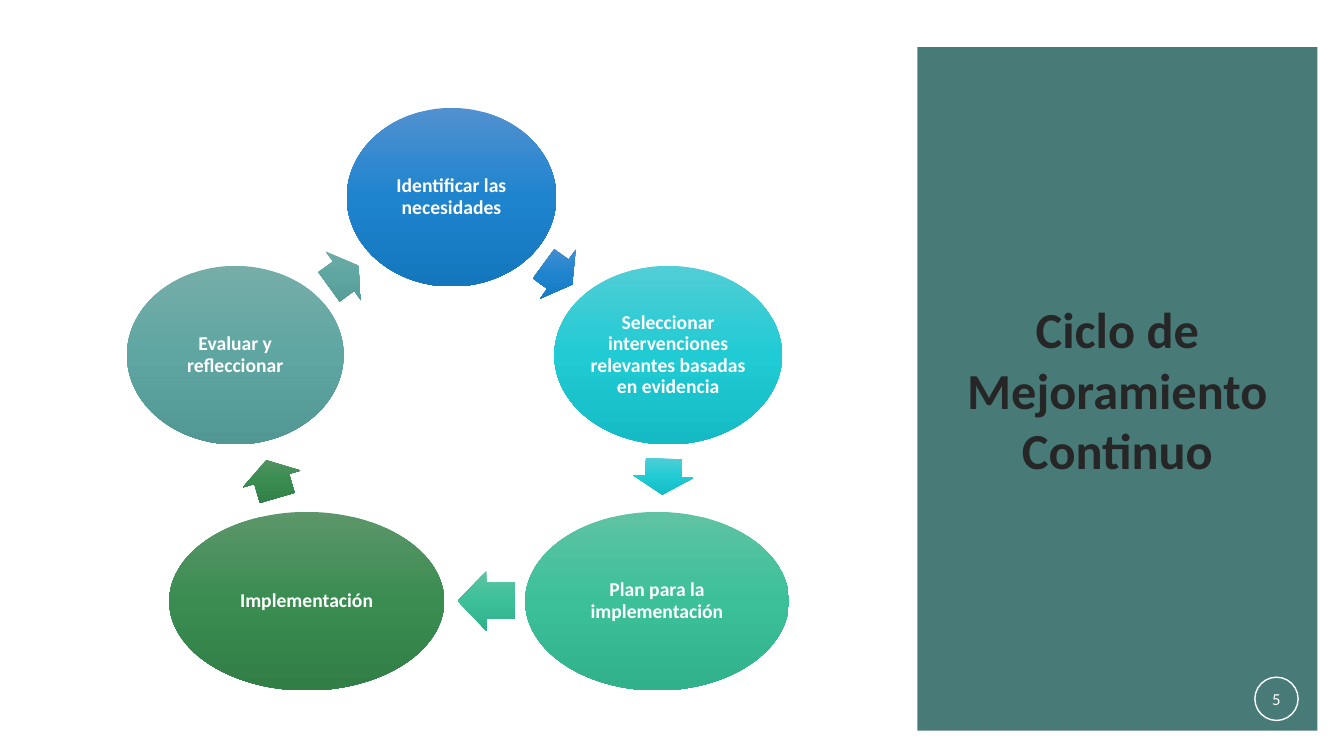
from dataclasses import dataclass
import copy

import pptx
import pptx.dml.color
import pptx.enum.shapes
import pptx.enum.text
import pptx.oxml.ns
import pptx.shapes.autoshape
import pptx.slide
import pptx.util

Cm = pptx.util.Cm
Shape = pptx.shapes.autoshape.Shape
Preset = pptx.enum.shapes.MSO_SHAPE


@dataclass(frozen=True)
class Theme:
    font: str = "Calibri"
    panel: str = "487B78"
    title: str = "262626"
    light: str = "FFFFFF"
    title_size: int = 36
    stage_size: int = 14
    number_size: int = 12


@dataclass(frozen=True)
class Arrow:
    x: float
    y: float
    length: float
    rotation: float


@dataclass(frozen=True)
class Stage:
    label: str
    x: float
    y: float
    width: float
    gradient: tuple[str, str, str]
    arrow: Arrow


THEME = Theme()
STAGE_HEIGHT = 4.5
ARROW_BREADTH = 1.52
STAGES = (
    Stage("Identificar las necesidades", 11.38, 4.97, 5.28,
          ("5191D0", "1E84CE", "1477BE"), Arrow(14.06, 6.91, 0.89, 36)),
    Stage("Seleccionar intervenciones relevantes basadas en evidencia", 16.84, 8.95, 5.74,
          ("51CED6", "20CBD4", "15BBC4"), Arrow(16.71, 12.01, 0.91, 92.7)),
    Stage("Plan para la implementación", 16.56, 15.15, 6.65,
          ("5FC3A3", "3CC09A", "30B08B"), Arrow(12.26, 15.14, 1.45, 180)),
    Stage("Implementación", 7.73, 15.15, 6.93,
          ("5C966A", "3A8C51", "317F47"), Arrow(6.85, 12.07, 0.99, 253.8)),
    Stage("Evaluar y refleccionar", 5.93, 8.95, 5.46,
          ("76ADA9", "5FA6A2", "519793"), Arrow(8.66, 6.96, 0.91, 324)),
)


def rgb(color: str) -> pptx.dml.color.RGBColor:
    return pptx.dml.color.RGBColor.from_string(color)


def add_centred(slide: pptx.slide.Slide, preset: Preset, x: float, y: float,
                width: float, height: float) -> Shape:
    shape = slide.shapes.add_shape(
        preset, Cm(x - width / 2), Cm(y - height / 2), Cm(width), Cm(height))
    shape.shadow.inherit = False
    shape.line.fill.background()
    return shape


def fill_gradient(shape: Shape, colors: tuple[str, str, str]) -> None:
    fill = shape.fill
    fill.gradient()
    fill.gradient_angle = 270
    gradient = shape._element.spPr.find(pptx.oxml.ns.qn("a:gradFill"))
    gradient.set("rotWithShape", "0")
    stop_list = gradient.find(pptx.oxml.ns.qn("a:gsLst"))
    stop_list.append(copy.deepcopy(stop_list[0]))
    for stop, position, color in zip(fill.gradient_stops, (0, 0.5, 1), colors):
        stop.position = position
        stop.color.rgb = rgb(color)


def write(shape: Shape, text: str, size: int, color: str, bold: bool, inset: float,
          line_spacing: float = 1.0) -> None:
    frame = shape.text_frame
    frame.word_wrap = True
    frame.vertical_anchor = pptx.enum.text.MSO_ANCHOR.MIDDLE
    frame.margin_left = frame.margin_right = Cm(inset)
    frame.margin_top = frame.margin_bottom = Cm(inset)
    paragraph = frame.paragraphs[0]
    paragraph.text = text
    paragraph.alignment = pptx.enum.text.PP_ALIGN.CENTER
    paragraph.line_spacing = line_spacing
    paragraph.font.name = THEME.font
    paragraph.font.size = pptx.util.Pt(size)
    paragraph.font.bold = bold
    paragraph.font.color.rgb = rgb(color)


def add_stage(slide: pptx.slide.Slide, stage: Stage) -> None:
    bubble = add_centred(slide, Preset.OVAL, stage.x, stage.y, stage.width, STAGE_HEIGHT)
    fill_gradient(bubble, stage.gradient)
    write(bubble, stage.label, THEME.stage_size, THEME.light, True, 0.05, 0.9)
    step = stage.arrow
    arrow = add_centred(slide, Preset.RIGHT_ARROW, step.x, step.y, step.length, ARROW_BREADTH)
    arrow.adjustments[0] = 0.6
    arrow.adjustments[1] = 0.5
    arrow.rotation = step.rotation
    fill_gradient(arrow, stage.gradient)


def add_title_panel(slide: pptx.slide.Slide) -> None:
    panel = add_centred(slide, Preset.RECTANGLE, 28.16, 9.8, 10.08, 17.22)
    panel.fill.solid()
    panel.fill.fore_color.rgb = rgb(THEME.panel)
    write(panel, "Ciclo de Mejoramiento Continuo", THEME.title_size, THEME.title, True, 0.25)
    page_number = add_centred(slide, Preset.OVAL, 32.17, 17.61, 1.09, 1.09)
    page_number.fill.background()
    page_number.line.color.rgb = rgb(THEME.light)
    page_number.line.width = pptx.util.Pt(1)
    write(page_number, "5", THEME.number_size, THEME.light, False, 0)


def main() -> None:
    presentation = pptx.Presentation()
    presentation.slide_width = Cm(33.87)
    presentation.slide_height = Cm(19.05)
    slide = presentation.slides.add_slide(presentation.slide_layouts[6])
    add_title_panel(slide)
    for stage in STAGES:
        add_stage(slide, stage)
    presentation.save("out.pptx")


if __name__ == "__main__":
    main()
